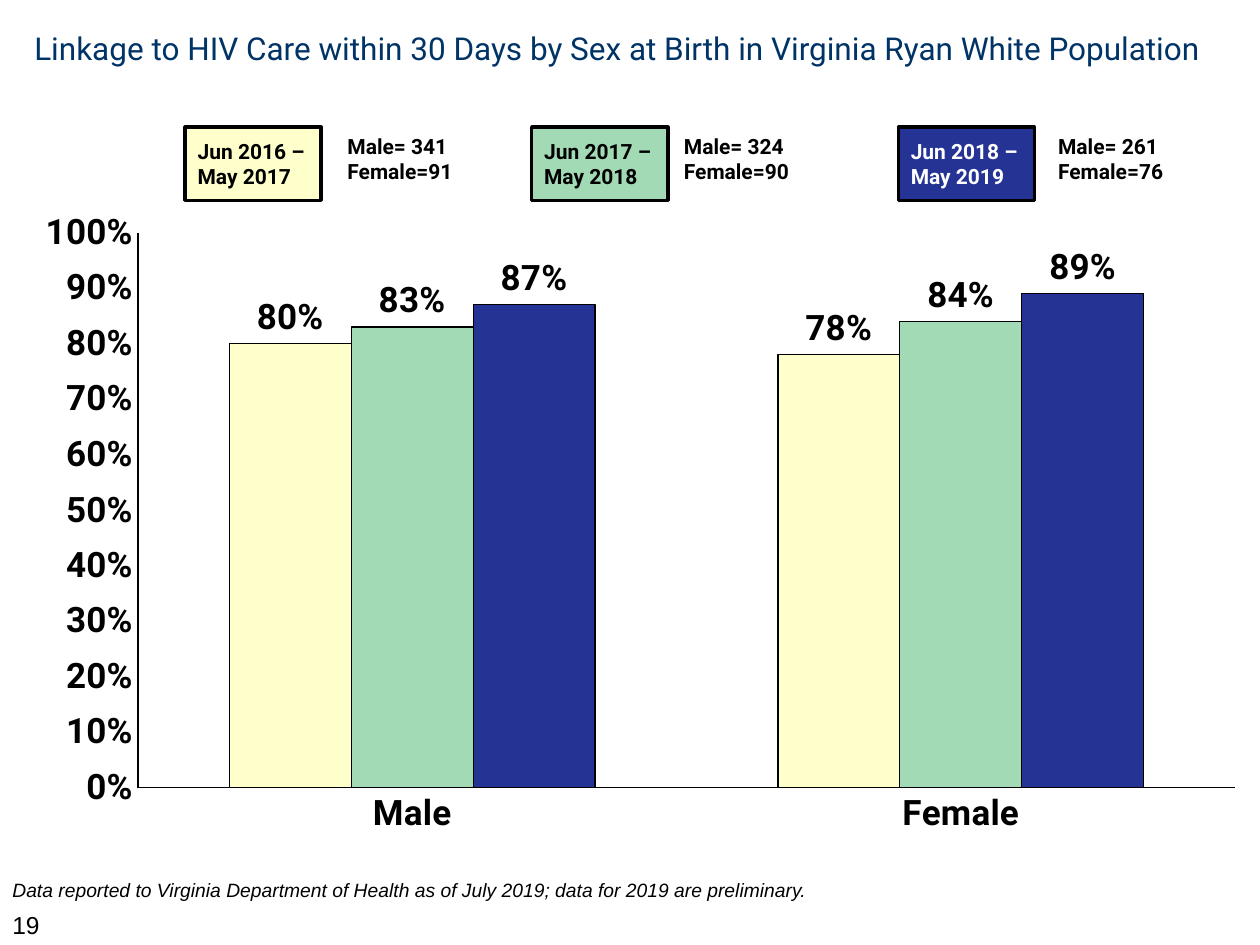
from collections import namedtuple
from dataclasses import dataclass

from lxml import etree
from pptx import Presentation
from pptx import util as u
from pptx.chart.data import CategoryChartData
from pptx.dml.color import RGBColor
from pptx.enum import chart as charts, shapes, text
from pptx.oxml import ns

Box = namedtuple("Box", "left top width height")
Period = namedtuple("Period", "label fill ink box_column count_column counts values")


@dataclass(frozen=True)
class Theme:
    """Fonts, colours and sizes of the slide."""
    font: str = "Roboto"
    note_font: str = "Arial"
    ink: str = "000000"
    title_ink: str = "003366"
    title: int = 18
    legend: int = 12
    chart: int = 20
    note: int = 11
    number: int = 14


THEME = Theme()
UNIT = u.Inches(0.1)
COLUMNS, ROWS = 100, 75
PERIODS = [
    Period("Jun 2016 – May 2017", "FFFFCC", "000000", 14.7, 26.6,
           ("Male= 341", "Female=91"), (0.80, 0.78)),
    Period("Jun 2017 – May 2018", "A1DAB4", "000000", 42.2, 53.3,
           ("Male= 324", "Female=90"), (0.83, 0.84)),
    Period("Jun 2018 – May 2019", "253494", "FFFFFF", 71.3, 83.0,
           ("Male= 261", "Female=76"), (0.87, 0.89)),
]


def color(value):
    """Turn a hex value into a colour."""
    return RGBColor.from_string(value)


def place(box):
    """Turn columns and rows into slide lengths."""
    return [round(length * UNIT) for length in box]


def format_font(font, size, name=THEME.font, ink=THEME.ink, bold=False, italic=False):
    """Set every property of a font."""
    font.size, font.name = u.Pt(size), name
    font.bold, font.italic = bold, italic
    font.color.rgb = color(ink)


def write(shape, lines, align=text.PP_ALIGN.LEFT, anchor=text.MSO_ANCHOR.TOP, **style):
    """Write one paragraph for each line into a shape."""
    frame = shape.text_frame
    frame.word_wrap = True
    frame.vertical_anchor = anchor
    frame.text = "\n".join(lines)
    for paragraph in frame.paragraphs:
        paragraph.alignment = align
        format_font(paragraph.runs[0].font, **style)


def add_text(slide, box, *lines, **style):
    """Add a text box with formatted lines."""
    write(slide.shapes.add_textbox(*place(box)), lines, **style)


def outline(line, width):
    """Draw a solid outline in the ink colour."""
    line.color.rgb = color(THEME.ink)
    line.width = u.Pt(width)


def add_legend(slide, box):
    """Add a colour key and the counts for each period."""
    for period in PERIODS:
        key = slide.shapes.add_shape(
            shapes.MSO_SHAPE.RECTANGLE,
            *place(Box(period.box_column, box.top, 10.8, box.height)))
        key.shadow.inherit = False
        key.fill.solid()
        key.fill.fore_color.rgb = color(period.fill)
        outline(key.line, 2)
        write(key, [period.label], anchor=text.MSO_ANCHOR.MIDDLE,
              size=THEME.legend, ink=period.ink, bold=True)
        width = min(14.7, box.left + box.width - period.count_column)
        add_text(slide, Box(period.count_column, box.top, width, 5),
                 *period.counts, size=THEME.legend, bold=True)


def set_plot_area(chart, **shares):
    """Fix the inner plot area as shares of the chart."""
    plot_area = chart.plots[0]._element.getparent()
    for old in plot_area.findall(ns.qn("c:layout")):
        plot_area.remove(old)
    layout = etree.Element(ns.qn("c:layout"))
    manual = etree.SubElement(layout, ns.qn("c:manualLayout"))
    settings = {"layoutTarget": "inner", "xMode": "edge", "yMode": "edge", **shares}
    for name, value in settings.items():
        etree.SubElement(manual, ns.qn(f"c:{name}")).set("val", str(value))
    plot_area.insert(0, layout)


def add_linkage_chart(slide, box):
    """Add the clustered columns by sex and period."""
    data = CategoryChartData(number_format="0%")
    data.categories = ["Male", "Female"]
    for period in PERIODS:
        data.add_series(period.label, period.values)
    chart = slide.shapes.add_chart(
        charts.XL_CHART_TYPE.COLUMN_CLUSTERED, *place(box), data).chart
    chart.has_legend = chart.has_title = False
    format_font(chart.font, THEME.chart, bold=True)
    set_plot_area(chart, x=0.094, y=0.05, w=0.886, h=0.857)

    for axis in (chart.category_axis, chart.value_axis):
        axis.has_major_gridlines = False
        axis.major_tick_mark = axis.minor_tick_mark = charts.XL_TICK_MARK.NONE
        outline(axis.format.line, 0.75)
    values = chart.value_axis
    values.minimum_scale, values.maximum_scale, values.major_unit = 0, 1, 0.1
    values.tick_labels.number_format = "0%"
    values.tick_labels.number_format_is_linked = False

    plot = chart.plots[0]
    plot.gap_width, plot.overlap = 150, 0
    plot.vary_by_categories = False
    plot.has_data_labels = True
    labels = plot.data_labels
    labels.show_value = True
    labels.number_format, labels.number_format_is_linked = "0%", False
    labels.position = charts.XL_LABEL_POSITION.OUTSIDE_END
    for series, period in zip(plot.series, PERIODS):
        series.invert_if_negative = False
        series.format.fill.solid()
        series.format.fill.fore_color.rgb = color(period.fill)
        outline(series.format.line, 0.75)


def add_footer(slide, box):
    """Add the source note above the slide number."""
    add_text(slide, Box(box.left, box.top, 93.3, 2.9),
             "Data reported to Virginia Department of Health as of July 2019; "
             "data for 2019 are preliminary.",
             size=THEME.note, name=THEME.note_font, italic=True)
    add_text(slide, Box(box.left, box.top + 2.5, 23.3, 2.5), "19",
             size=THEME.number, name=THEME.note_font)


def main():
    """Build and save the slide."""
    presentation = Presentation()
    presentation.slide_width = COLUMNS * UNIT
    presentation.slide_height = ROWS * UNIT
    slide = presentation.slides.add_slide(presentation.slide_layouts[6])
    add_text(slide, Box(-0.3, 1.7, 98.6, 4.2),
             "Linkage to HIV Care within 30 Days by Sex at Birth "
             "in Virginia Ryan White Population",
             align=text.PP_ALIGN.CENTER, anchor=text.MSO_ANCHOR.MIDDLE,
             size=THEME.title, ink=THEME.title_ink)
    add_legend(slide, Box(0, 10.1, COLUMNS, 5.8))
    add_linkage_chart(slide, Box(1.7, 15.9, 98.3, 51.4))
    add_footer(slide, Box(0, 69.2, COLUMNS, 5))
    presentation.save("out.pptx")


if __name__ == "__main__":
    main()
